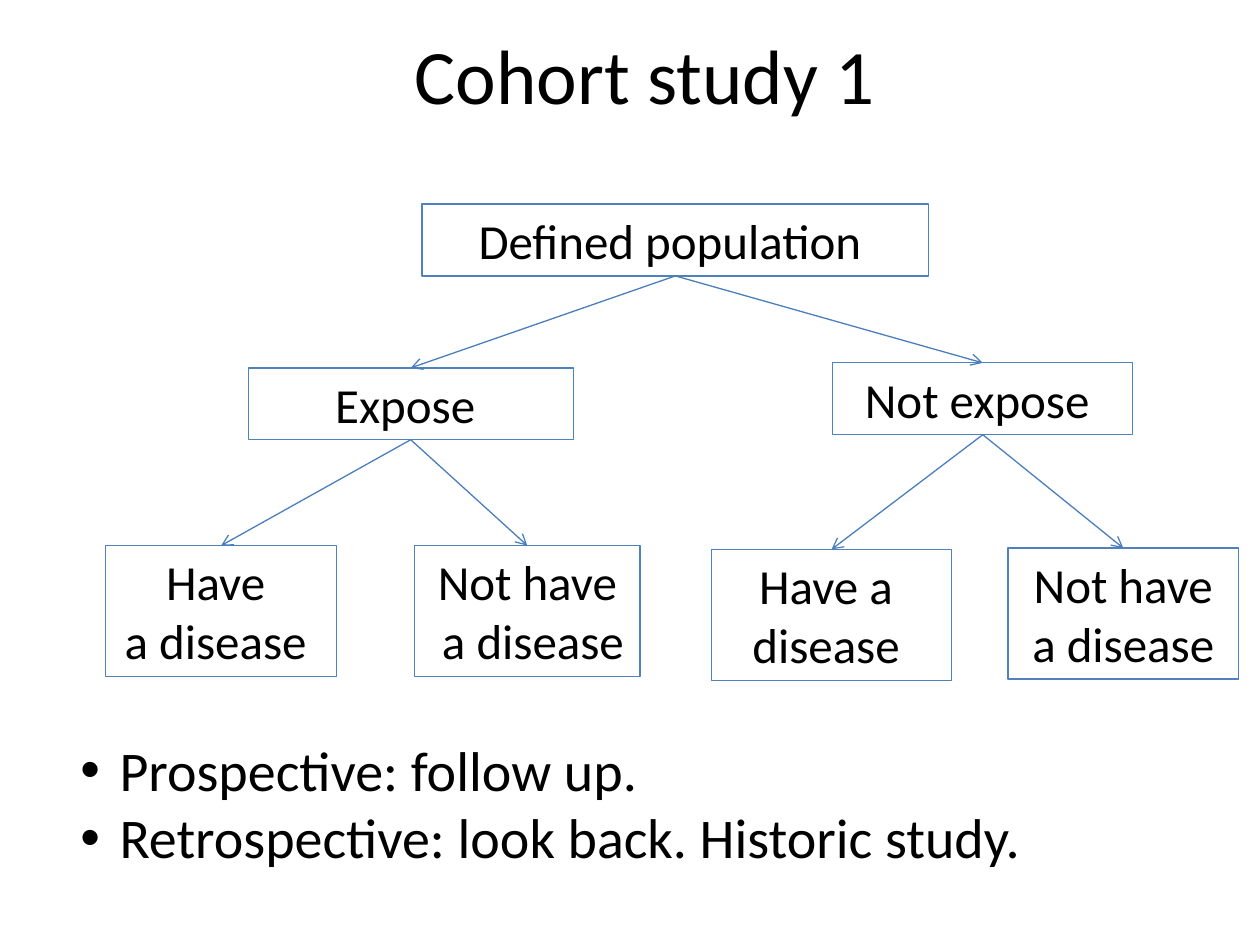
from lxml import etree
from pptx import Presentation
from pptx import util as u
from pptx.dml.color import RGBColor
from pptx.enum import shapes, text
from pptx.oxml import ns

COLORS = {"ink": "000000", "border": "4F81BD", "arrow": "4B7EBC"}
FRAME = {"word_wrap": True, "vertical_anchor": text.MSO_ANCHOR.TOP}
TOP_SITE, BOTTOM_SITE = 0, 2

deck = Presentation()
deck.slide_width, deck.slide_height = u.Inches(10), u.Inches(7.5)
COL, ROW = deck.slide_width / 100, deck.slide_height / 75
slide = deck.slides.add_slide(deck.slide_layouts[6])


def cells(left, top, width, height):
    return [round(n * unit) for n, unit in
            zip((left, top, width, height), (COL, ROW, COL, ROW))]


def write(holder, lines, size, align, **frame_format):
    frame = holder.text_frame
    for name, value in {**FRAME, **frame_format}.items():
        setattr(frame, name, value)
    frame.text = "\n".join(lines)
    for paragraph in frame.paragraphs:
        paragraph.alignment = align
        for run in paragraph.runs:
            for name, value in {"size": u.Pt(size), "name": "Calibri"}.items():
                setattr(run.font, name, value)
            run.font.color.rgb = RGBColor.from_string(COLORS["ink"])


title = slide.shapes.add_textbox(*cells(6.2, 0, 90, 11.7))
write(title, ["Cohort study 1"], 44, text.PP_ALIGN.CENTER,
      vertical_anchor=text.MSO_ANCHOR.MIDDLE)

groups = {
    "population": (33.5, 16.2, 40.2, 5.7, ["Defined population "]),
    "exposed": (19.7, 29.2, 25.8, 5.7, ["Expose "]),
    "unexposed": (66.1, 28.8, 23.8, 5.7, ["Not expose "]),
    "exposed ill": (8.4, 43.3, 18.3, 10.4, ["Have ", "a disease "]),
    "exposed well": (32.9, 43.3, 17.9, 10.4, ["Not have", " a disease "]),
    "unexposed ill": (56.5, 43.6, 19, 10.4, ["Have a ", "disease "]),
    "unexposed well": (80, 43.5, 18.3, 10.4, ["Not have", "a disease"]),
}
boxes = {}
for group, (*place, lines) in groups.items():
    box = slide.shapes.add_shape(shapes.MSO_SHAPE.RECTANGLE, *cells(*place))
    box.shadow.inherit = False
    box.fill.background()
    box.line.color.rgb = RGBColor.from_string(COLORS["border"])
    box.line.width = u.Pt(0.75)
    write(box, lines, 28, text.PP_ALIGN.CENTER)
    boxes[group] = box

branches = {
    "population": ["exposed", "unexposed"],
    "exposed": ["exposed ill", "exposed well"],
    "unexposed": ["unexposed ill", "unexposed well"],
}
for parent, children in branches.items():
    for child in children:
        arrow = slide.shapes.add_connector(shapes.MSO_CONNECTOR.STRAIGHT, 0, 0, 0, 0)
        arrow.begin_connect(boxes[parent], BOTTOM_SITE)
        arrow.end_connect(boxes[child], TOP_SITE)
        arrow.line.color.rgb = RGBColor.from_string(COLORS["arrow"])
        arrow.line.width = u.Pt(0.75)
        etree.SubElement(arrow.line._get_or_add_ln(), ns.qn("a:tailEnd"), type="arrow")
        etree.SubElement(arrow._element.spPr, ns.qn("a:effectLst"))

directions = slide.shapes.add_textbox(*cells(5.4, 57.9, 90.8, 17.1))
write(directions,
      ["Prospective: follow up.", "Retrospective: look back. Historic study."],
      32, text.PP_ALIGN.LEFT)
for paragraph in directions.text_frame.paragraphs:
    properties = paragraph._p.get_or_add_pPr()
    indent = round(3.1 * COL)
    properties.set("marL", str(indent))
    properties.set("indent", str(-indent))
    etree.SubElement(properties, ns.qn("a:buFont"), typeface="Arial")
    etree.SubElement(properties, ns.qn("a:buChar"), char="•")

deck.save("out.pptx")
